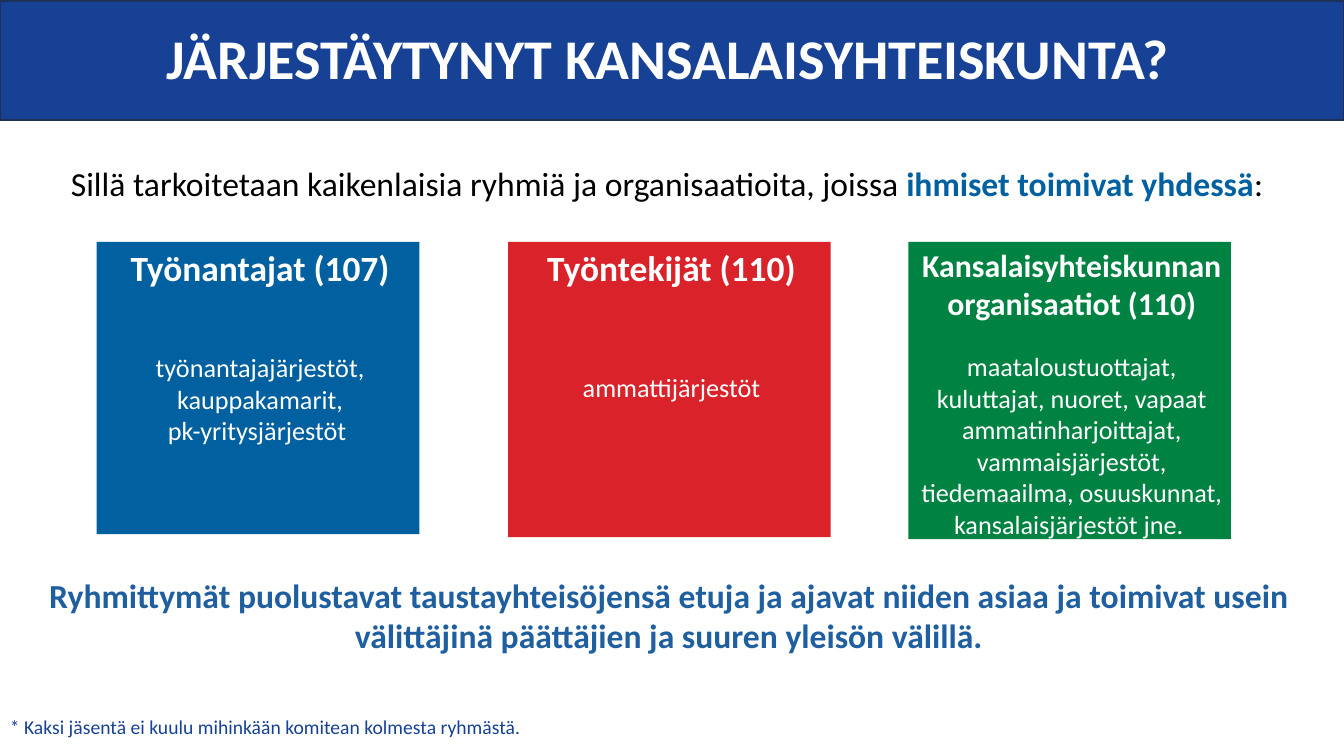
from pptx import Presentation
from pptx.dml.color import RGBColor
from pptx.enum import shapes, text
from pptx.util import Inches, Pt

FONT = "Calibri"
COLORS = {
    "white": "FFFFFF", "black": "000000", "navy": "174195", "edge": "1E3256",
    "blue": "0060A0", "red": "D9222A", "green": "008342", "steel": "1F5FA0",
}
CARD_TOP = 2.4
CARD_WIDTH = 3.2
# left, height, colour, heading, heading size, body top, body lines
CARDS = [
    (0.96, 2.9, "blue", "Työnantajat (107)", 25.3, 3.44,
     ["työnantajajärjestöt,", "kauppakamarit,", "pk-yritysjärjestöt "]),
    (5.04, 2.93, "red", "Työntekijät (110)", 25.3, 3.63,
     ["ammattijärjestöt"]),
    (9.01, 2.95, "green", "Kansalaisyhteiskunnan organisaatiot (110)", 22.7, 3.43,
     ["maataloustuottajat, kuluttajat, nuoret, vapaat ammatinharjoittajat, "
      "vammaisjärjestöt, tiedemaailma, osuuskunnat, kansalaisjärjestöt jne. "]),
]


def color(name):
    return RGBColor.from_string(COLORS[name])


def add_box(slide, left, top, width, height, fill, line=None):
    box = slide.shapes.add_shape(
        shapes.MSO_SHAPE.RECTANGLE,
        Inches(left), Inches(top), Inches(width), Inches(height))
    box.shadow.inherit = False
    box.fill.solid()
    box.fill.fore_color.rgb = color(fill)
    if line:
        box.line.color.rgb = color(line)
        box.line.width = Pt(1)
    else:
        box.line.fill.background()


def add_text(slide, left, top, width, height, lines, size, ink,
             bold=False, align=text.PP_ALIGN.CENTER):
    """Add a wrapped text box with one paragraph per line; return its frame."""
    frame = slide.shapes.add_textbox(
        Inches(left), Inches(top), Inches(width), Inches(height)).text_frame
    frame.word_wrap = True
    frame.text = "\n".join(lines)
    for para in frame.paragraphs:
        para.alignment = align
        para.font.name = FONT
        para.font.size = Pt(size)
        para.font.bold = bold
        para.font.color.rgb = color(ink)
    return frame


def add_intro(slide):
    frame = add_text(
        slide, -0.05, 1.61, 13.33, 0.57,
        ["Sillä tarkoitetaan kaikenlaisia ryhmiä ja organisaatioita, joissa "],
        24, "black")
    para = frame.paragraphs[0]
    para.line_spacing = 0.9
    stress = para.add_run()
    stress.text = "ihmiset toimivat yhdessä"
    stress.font.bold = True
    stress.font.color.rgb = color("blue")
    para.add_run().text = ":"


def add_card(slide, left, height, fill, heading, size, body_top, body):
    add_box(slide, left, CARD_TOP, CARD_WIDTH, height, fill)
    width = CARD_WIDTH + 0.04
    add_text(slide, left, CARD_TOP - 0.01, width, 0.54, [heading], size, "white", True)
    add_text(slide, left, body_top, width, CARD_TOP + height - body_top,
             body, 18.7, "white")


def add_closing(slide):
    frame = add_text(
        slide, 0.35, 5.63, 12.57, 1.59,
        ["Ryhmittymät puolustavat taustayhteisöjensä etuja ja ajavat niiden asiaa "
         "ja toimivat usein välittäjinä päättäjien ja suuren yleisön välillä."],
        24, "steel", True)
    frame.margin_left = frame.margin_right = Inches(0.13)
    frame.margin_top = frame.margin_bottom = Inches(0.07)


def main():
    deck = Presentation()
    deck.slide_width, deck.slide_height = Inches(13.33), Inches(7.5)
    slide = deck.slides.add_slide(deck.slide_layouts[6])

    add_box(slide, 0, 0.01, 13.33, 1.18, "navy", "edge")
    add_text(slide, -0.09, 0.18, 13.43, 1.17,
             ["JÄRJESTÄYTYNYT KANSALAISYHTEISKUNTA?"], 40, "white", True)
    add_intro(slide)
    for card in CARDS:
        add_card(slide, *card)
    add_closing(slide)
    add_text(slide, 0, 7.04, 9.34, 0.34,
             ["* Kaksi jäsentä ei kuulu mihinkään komitean kolmesta ryhmästä."],
             14, "navy", align=text.PP_ALIGN.LEFT)
    deck.save("out.pptx")


if __name__ == "__main__":
    main()
